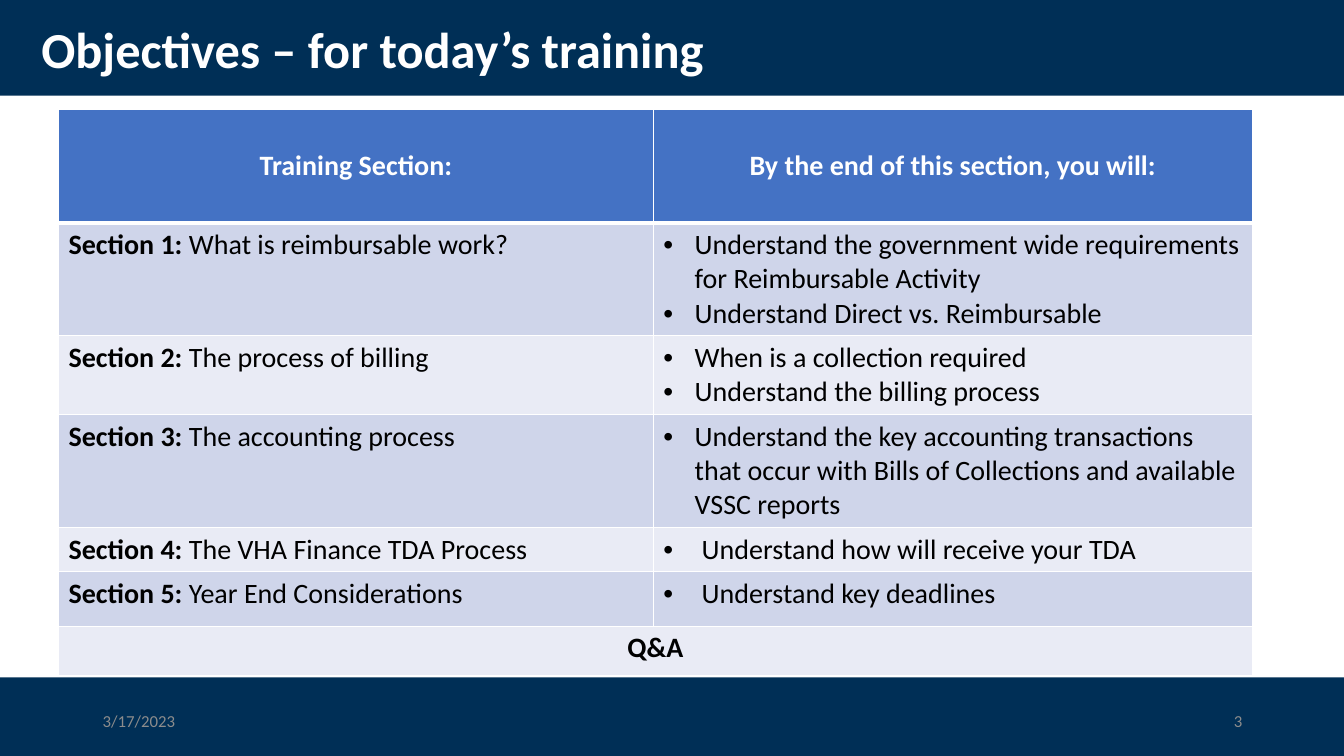
from lxml import etree
from pptx import Presentation
from pptx.dml.color import RGBColor
from pptx.enum.shapes import MSO_SHAPE
from pptx.enum.text import MSO_ANCHOR, PP_ALIGN
from pptx.oxml.ns import qn
from pptx.util import Inches, Pt

NAVY = RGBColor(0x00, 0x2F, 0x56)
BLUE = RGBColor(0x44, 0x72, 0xC4)
BAND_DARK = RGBColor(0xCF, 0xD5, 0xEA)
BAND_LIGHT = RGBColor(0xE9, 0xEB, 0xF5)
WHITE = RGBColor(0xFF, 0xFF, 0xFF)
BLACK = RGBColor(0x00, 0x00, 0x00)
GRAY = RGBColor(0x8C, 0x8C, 0x8C)

RECTANGLE = MSO_SHAPE.RECTANGLE
MIDDLE, TOP = MSO_ANCHOR.MIDDLE, MSO_ANCHOR.TOP
LEFT, CENTER, RIGHT = PP_ALIGN.LEFT, PP_ALIGN.CENTER, PP_ALIGN.RIGHT
TITLE_ONLY = 5
SLIDE_WIDTH = 13.33

HEADINGS = ["Training Section:", "By the end of this section, you will:"]
# topic, goals, bullet indent in inches
SECTIONS = [
    ("What is reimbursable work?",
     ["Understand the government wide requirements for Reimbursable Activity",
      "Understand Direct vs. Reimbursable"], 0.31),
    ("The process of billing",
     ["When is a collection required", "Understand the billing process"], 0.31),
    ("The accounting process",
     ["Understand the key accounting transactions that occur with Bills of "
      "Collections and available VSSC reports"], 0.31),
    ("The VHA Finance TDA Process", ["Understand how will receive your TDA"], 0.38),
    ("Year End Considerations", ["Understand key deadlines"], 0.38),
]
COLUMN_WIDTHS = [5.9, 5.94]
ROW_HEIGHTS = [1.12, 1.12, 0.78, 1.12, 0.44, 0.54, 0.49]


class SlideBuilder:
    def __init__(self, slide, font_name="Calibri"):
        self.slide = slide
        self.font_name = font_name

    def add_text(self, paragraph, text, size, color, bold=False):
        run = paragraph.add_run()
        run.text = text
        style = {"name": self.font_name, "size": Pt(size), "bold": bold}
        for attribute, value in style.items():
            setattr(run.font, attribute, value)
        run.font.color.rgb = color

    def band(self, top, height):
        band = self.slide.shapes.add_shape(
            RECTANGLE, 0, Inches(top), Inches(SLIDE_WIDTH), Inches(height))
        band.shadow.inherit = False
        band.fill.solid()
        band.fill.fore_color.rgb = NAVY
        band.line.fill.background()

    def title(self, text):
        title = self.slide.shapes.title
        place = {"left": 0.31, "top": 0.18, "width": 11.5, "height": 0.68}
        for attribute, value in place.items():
            setattr(title, attribute, Inches(value))
        title.text_frame.vertical_anchor = MIDDLE
        paragraph = title.text_frame.paragraphs[0]
        paragraph.alignment = LEFT
        paragraph.line_spacing = 0.9
        self.add_text(paragraph, text, 36, WHITE, bold=True)
        # Bring the title in front of the navy bands.
        title.element.getparent().append(title.element)

    def footer(self, text, left, alignment):
        footer = self.slide.shapes.add_textbox(
            Inches(left), Inches(6.95), Inches(3), Inches(0.4))
        frame = footer.text_frame
        frame.word_wrap = True
        frame.vertical_anchor = MIDDLE
        frame.paragraphs[0].alignment = alignment
        self.add_text(frame.paragraphs[0], text, 12, GRAY)

    def table(self, left, top):
        table = self.slide.shapes.add_table(
            len(ROW_HEIGHTS), len(COLUMN_WIDTHS), Inches(left), Inches(top),
            Inches(sum(COLUMN_WIDTHS)), Inches(sum(ROW_HEIGHTS))).table
        for column, width in zip(table.columns, COLUMN_WIDTHS):
            column.width = Inches(width)
        for row, height in zip(table.rows, ROW_HEIGHTS):
            row.height = Inches(height)
        return table

    def cell(self, cell, fill, anchor=TOP, top_width=1, bottom_width=1):
        """Style a table cell and return its first paragraph."""
        properties = cell._tc.get_or_add_tcPr()
        widths = {"lnL": 1, "lnR": 1, "lnT": top_width, "lnB": bottom_width}
        for tag, width in widths.items():
            line = etree.SubElement(properties, qn(f"a:{tag}"), w=str(Pt(width)))
            solid = etree.SubElement(line, qn("a:solidFill"))
            etree.SubElement(solid, qn("a:srgbClr"), val=str(WHITE))
        cell.fill.solid()
        cell.fill.fore_color.rgb = fill
        cell.vertical_anchor = anchor
        return cell.text_frame.paragraphs[0]

    def bullets(self, frame, items, indent):
        for number, item in enumerate(items):
            paragraph = frame.add_paragraph() if number else frame.paragraphs[0]
            properties = paragraph._p.get_or_add_pPr()
            properties.set("marL", str(Inches(indent)))
            properties.set("indent", str(-Inches(indent)))
            etree.SubElement(properties, qn("a:buFont"), typeface="Arial")
            etree.SubElement(properties, qn("a:buChar"), char="•")
            self.add_text(paragraph, item, 20, BLACK)


def main():
    presentation = Presentation()
    presentation.slide_width = Inches(SLIDE_WIDTH)
    presentation.slide_height = Inches(7.5)
    layout = presentation.slide_layouts[TITLE_ONLY]
    builder = SlideBuilder(presentation.slides.add_slide(layout))

    builder.band(0, 0.95)
    builder.band(6.72, 0.78)
    builder.title("Objectives – for today’s training")

    objectives = builder.table(0.58, 1.09)
    for column, heading in enumerate(HEADINGS):
        paragraph = builder.cell(objectives.cell(0, column), BLUE, MIDDLE, bottom_width=3)
        paragraph.alignment = CENTER
        builder.add_text(paragraph, heading, 20, WHITE, bold=True)

    for number, (topic, goals, indent) in enumerate(SECTIONS, start=1):
        fill = BAND_DARK if number % 2 else BAND_LIGHT
        top_width = 3 if number == 1 else 1
        topic_cell, goals_cell = objectives.rows[number].cells
        paragraph = builder.cell(topic_cell, fill, top_width=top_width)
        builder.add_text(paragraph, f"Section {number}: ", 20, BLACK, bold=True)
        builder.add_text(paragraph, topic, 20, BLACK)
        builder.cell(goals_cell, fill, top_width=top_width)
        builder.bullets(goals_cell.text_frame, goals, indent)

    closing, closing_end = objectives.rows[len(SECTIONS) + 1].cells
    closing.merge(closing_end)
    paragraph = builder.cell(closing, BAND_LIGHT)
    paragraph.alignment = CENTER
    builder.add_text(paragraph, "Q&A", 20, BLACK, bold=True)

    builder.footer("3/17/2023", 0.92, LEFT)
    builder.footer("3", 9.42, RIGHT)
    presentation.save("out.pptx")


if __name__ == "__main__":
    main()
